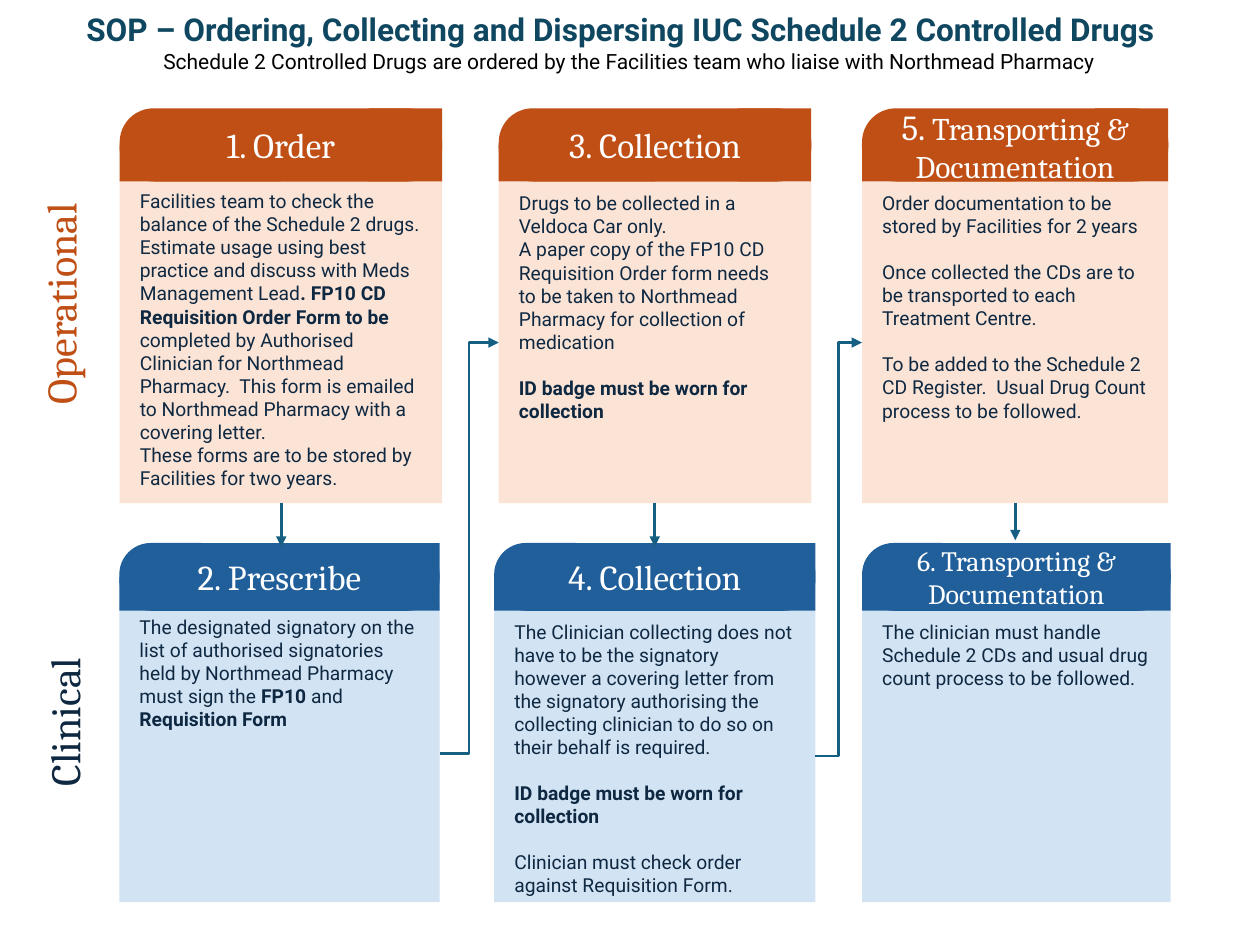
"""Build the six-step controlled drugs procedure slide."""
from dataclasses import dataclass

from lxml import etree
from pptx import Presentation
from pptx.dml.color import RGBColor
from pptx.enum.shapes import MSO_CONNECTOR, MSO_SHAPE
from pptx.enum.text import MSO_ANCHOR, PP_ALIGN
from pptx.oxml.ns import qn
from pptx.util import Pt

RECTANGLE = MSO_SHAPE.RECTANGLE
ROUNDED = MSO_SHAPE.ROUNDED_RECTANGLE
STRAIGHT = MSO_CONNECTOR.STRAIGHT
ELBOW = MSO_CONNECTOR.ELBOW
CENTER = PP_ALIGN.CENTER
LEFT = PP_ALIGN.LEFT
TOP = MSO_ANCHOR.TOP
MIDDLE = MSO_ANCHOR.MIDDLE


@dataclass(frozen=True)
class Theme:
    orange: str = "C04F15"
    orange_tint: str = "FBE3D6"
    blue: str = "215F9A"
    blue_tint: str = "D2E3F3"
    navy: str = "0E2841"
    title: str = "0F4761"
    arrow: str = "156082"
    black: str = "000000"
    white: str = "FFFFFF"
    serif: str = "Cambria"
    sans: str = "Roboto"
    title_size: float = 18
    subtitle_size: float = 12
    label_size: float = 24
    heading_size: float = 20
    heading_medium: float = 18
    heading_small: float = 16
    body_size: float = 11
    paragraph_gap: float = 13
    arrow_width: float = 1.5
    corner: float = 0.463
    patch_width: float = 42


THEME = Theme()


@dataclass(frozen=True)
class Box:
    left: float
    top: float
    width: float
    height: float

    def lengths(self) -> tuple:
        return Pt(self.left), Pt(self.top), Pt(self.width), Pt(self.height)


@dataclass(frozen=True)
class Run:
    text: str
    size: float = THEME.body_size
    color: str = THEME.navy
    font: str = THEME.sans
    bold: bool = False


@dataclass(frozen=True)
class Paragraph:
    runs: tuple[Run, ...]
    before: float = 0
    after: float = 0
    line_spacing: float = 1


@dataclass(frozen=True)
class Row:
    header_top: float
    header_height: float
    bottom: float
    color: str
    tint: str


@dataclass(frozen=True)
class Card:
    row: Row
    left: float
    width: float
    body_top: float
    heading: tuple[Run, ...]
    body: tuple[Paragraph, ...]


@dataclass(frozen=True)
class Arrow:
    kind: int
    start: tuple[float, float]
    end: tuple[float, float]


def heading(text: str, size: float = THEME.heading_size) -> Run:
    return Run(text, size, THEME.white, THEME.serif)


def plain(text: str, before: float = 0) -> Paragraph:
    return Paragraph((Run(text),), before)


def strong(text: str) -> Run:
    return Run(text, bold=True)


GAP = THEME.paragraph_gap
BADGE = Paragraph((strong("ID badge must be worn for collection"),), GAP)
OPERATIONAL = Row(61.9, 41.8, 287.6, THEME.orange, THEME.orange_tint)
CLINICAL = Row(310.3, 38.7, 515.5, THEME.blue, THEME.blue_tint)

CARDS = (
    Card(OPERATIONAL, 68.4, 184.3, 102.4, (heading("1. Order"),), (
        Paragraph((
            Run("Facilities team to check the balance of the Schedule 2 drugs. Estimate usage "
                "using best practice and discuss with Meds Management Lead"),
            strong(". FP10 CD Requisition Order Form to be "),
            Run("completed by Authorised Clinician for Northmead Pharmacy.  This form is "
                "emailed to Northmead Pharmacy with a covering letter."))),
        plain("These forms are to be stored by Facilities for two years."))),
    Card(CLINICAL, 68.2, 183, 345.6, (heading("2. Prescribe"),), (
        Paragraph((
            Run("The designated signatory on the list of authorised signatories held by "
                "Northmead Pharmacy must sign the "),
            strong("FP10"), Run(" and "), strong("Requisition Form"))),)),
    Card(OPERATIONAL, 285, 178.6, 103.7, (heading("3. Collection"),), (
        plain("Drugs to be collected in a Veldoca Car only."),
        plain("A paper copy of the FP10 CD Requisition Order form needs to be taken to "
              "Northmead Pharmacy for collection of medication"),
        BADGE)),
    Card(CLINICAL, 282.4, 183.6, 348.5, (heading("4. Collection"),), (
        plain("The Clinician collecting does not have to be the signatory however a covering "
              "letter from the signatory authorising the collecting clinician to do so on "
              "their behalf is required."),
        BADGE,
        plain("Clinician must check order against Requisition Form.", GAP))),
    Card(OPERATIONAL, 492.6, 175, 103.7, (
        heading("5. "), heading("Transporting &", THEME.heading_medium), heading(" "),
        heading("Documentation", THEME.heading_medium)), (
        plain("Order documentation to be stored by Facilities for 2 years"),
        plain("Once collected the CDs are to be transported to each Treatment Centre.", GAP),
        plain("To be added to the Schedule 2 CD Register.  Usual Drug Count process to be "
              "followed.", GAP))),
    Card(CLINICAL, 492.6, 176.4, 348.5, (
        heading("6. Transporting & Documentation", THEME.heading_small),), (
        plain("The clinician must handle Schedule 2 CDs and usual drug count process to be "
              "followed."),)),
)

ARROWS = (
    Arrow(STRAIGHT, (160.7, 287.4), (160.7, 312.5)),
    Arrow(ELBOW, (251.2, 430.6), (285, 195.8)),
    Arrow(STRAIGHT, (374.2, 287.4), (374.2, 312.5)),
    Arrow(ELBOW, (465.8, 432), (492.6, 195.8)),
    Arrow(STRAIGHT, (580.2, 287.4), (580.2, 308.7)),
)


def write(shape, paragraphs: tuple[Paragraph, ...], align: int, anchor: int) -> None:
    frame = shape.text_frame
    frame.word_wrap = True
    frame.vertical_anchor = anchor
    for index, content in enumerate(paragraphs):
        paragraph = frame.add_paragraph() if index else frame.paragraphs[0]
        paragraph.alignment = align
        paragraph.space_before = Pt(content.before)
        paragraph.space_after = Pt(content.after)
        paragraph.line_spacing = content.line_spacing
        for part in content.runs:
            run = paragraph.add_run()
            run.text = part.text
            run.font.name = part.font
            run.font.size = Pt(part.size)
            run.font.bold = part.bold
            run.font.color.rgb = RGBColor.from_string(part.color)


def add_block(slide, kind: int, box: Box, color: str):
    shape = slide.shapes.add_shape(kind, *box.lengths())
    shape.shadow.inherit = False
    shape.fill.solid()
    shape.fill.fore_color.rgb = RGBColor.from_string(color)
    shape.line.fill.background()
    return shape


def add_text(slide, box: Box, paragraph: Paragraph, anchor: int = TOP, rotation: float = 0) -> None:
    shape = slide.shapes.add_textbox(*box.lengths())
    shape.rotation = rotation
    write(shape, (paragraph,), CENTER, anchor)


def add_card(slide, card: Card) -> None:
    row = card.row
    body = add_block(slide, RECTANGLE, Box(
        card.left, card.body_top, card.width, row.bottom - card.body_top), row.tint)
    frame = body.text_frame
    frame.margin_left = frame.margin_right = Pt(11.5)
    frame.margin_top = frame.margin_bottom = Pt(5.76)
    write(body, card.body, LEFT, TOP)

    header = Box(card.left, row.header_top, card.width, row.header_height)
    half = header.height / 2
    add_block(slide, RECTANGLE, Box(
        header.left, header.top + half, header.width / 2, half), row.color)
    add_block(slide, ROUNDED, header, row.color).adjustments[0] = THEME.corner
    add_block(slide, RECTANGLE, Box(
        header.left + header.width - THEME.patch_width, header.top,
        THEME.patch_width, header.height), row.color)
    add_text(slide, header, Paragraph(card.heading), MIDDLE)


def add_arrow(slide, arrow: Arrow) -> None:
    points = (Pt(value) for value in arrow.start + arrow.end)
    connector = slide.shapes.add_connector(arrow.kind, *points)
    connector.line.color.rgb = RGBColor.from_string(THEME.arrow)
    connector.line.width = Pt(THEME.arrow_width)
    etree.SubElement(connector.line._get_or_add_ln(), qn("a:tailEnd"), type="triangle")
    etree.SubElement(connector._element.spPr, qn("a:effectLst"))


def main() -> None:
    presentation = Presentation()
    presentation.slide_width, presentation.slide_height = Pt(720), Pt(540)
    slide = presentation.slides.add_slide(presentation.slide_layouts[6])
    for card in CARDS:
        add_card(slide, card)
    add_text(slide, Box(-66.2, 394.6, 205.2, 36), Paragraph((
        Run("Clinical", THEME.label_size, THEME.navy, THEME.serif),)), rotation=270)
    add_text(slide, Box(-79.9, 155.5, 228.2, 36), Paragraph((
        Run("Operational", THEME.label_size, THEME.orange, THEME.serif),)), rotation=270)
    add_text(slide, Box(36, 0.7, 637.2, 29.5), Paragraph((
        Run("SOP – Ordering, Collecting and Dispersing IUC Schedule 2 Controlled Drugs",
            THEME.title_size, THEME.title, bold=True),), 8, 4, 1.07))
    add_text(slide, Box(16.6, 24.5, 686.2, 21.6), Paragraph((
        Run("Schedule 2 Controlled Drugs are ordered by the Facilities team who liaise with "
            "Northmead Pharmacy", THEME.subtitle_size, THEME.black),)))
    for arrow in ARROWS:
        add_arrow(slide, arrow)
    presentation.save("out.pptx")


if __name__ == "__main__":
    main()
